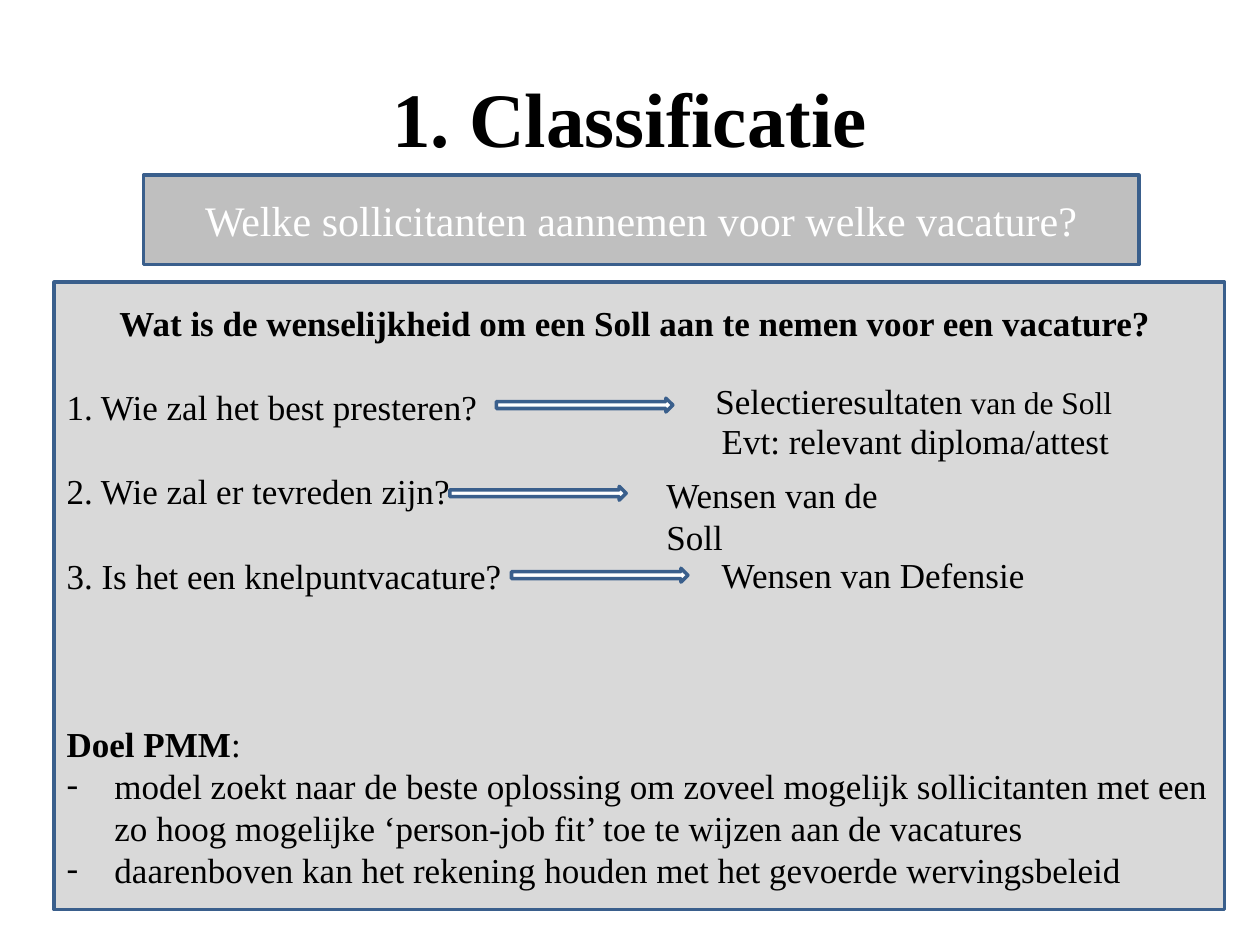
from typing import NamedTuple

from lxml import etree
from pptx import Presentation
from pptx.dml.color import RGBColor
from pptx.enum.shapes import MSO_SHAPE
from pptx.enum.text import MSO_ANCHOR, PP_ALIGN
from pptx.oxml.ns import qn
from pptx.util import Inches, Pt

RECT, ARROW = MSO_SHAPE.RECTANGLE, MSO_SHAPE.RIGHT_ARROW
TOP, MIDDLE = MSO_ANCHOR.TOP, MSO_ANCHOR.MIDDLE
LEFT, CENTER = PP_ALIGN.LEFT, PP_ALIGN.CENTER

FONT = "Times New Roman"
COLORS = {
    "text": "000000",
    "light": "FFFFFF",
    "banner": "BFBFBF",
    "panel": "D9D9D9",
    "line": "3A5F8C",
}
COLS, ROWS = 100, 75
CELL = Inches(0.1)
LINE_GAP = 24  # one line of body text, in points


class Box(NamedTuple):
    """A place on the grid, in columns and rows."""
    col: float
    row: float
    cols: float
    rows: float

    def emu(self) -> list[int]:
        return [round(n * CELL) for n in self]


class Run(NamedTuple):
    text: str
    size: float = 20
    bold: bool = False
    color: str = "text"


class Para(NamedTuple):
    runs: list[Run]
    align: PP_ALIGN = LEFT
    before: float = 0
    bullet: bool = False


def rgb(name: str) -> RGBColor:
    return RGBColor.from_string(COLORS[name])


def add_dash(p) -> None:
    """Give the paragraph a hanging dash bullet."""
    pPr = p._p.get_or_add_pPr()
    pPr.set("marL", str(Inches(0.38)))
    pPr.set("indent", str(-Inches(0.38)))
    etree.SubElement(pPr, qn("a:buFont")).set("typeface", FONT)
    etree.SubElement(pPr, qn("a:buChar")).set("char", "-")


def fill_text(tf, paras: list[Para], anchor: MSO_ANCHOR) -> None:
    tf.word_wrap = True
    tf.vertical_anchor = anchor
    for i, para in enumerate(paras):
        p = tf.paragraphs[0] if i == 0 else tf.add_paragraph()
        p.alignment = para.align
        p.space_before = Pt(para.before)
        if para.bullet:
            add_dash(p)
        for run in para.runs:
            r = p.add_run()
            r.text = run.text
            r.font.name = FONT
            r.font.size = Pt(run.size)
            r.font.bold = run.bold
            r.font.color.rgb = rgb(run.color)


def add_label(s, box: Box, paras: list[Para], anchor: MSO_ANCHOR = TOP) -> None:
    fill_text(s.shapes.add_textbox(*box.emu()).text_frame, paras, anchor)


def add_block(s, kind: MSO_SHAPE, box: Box, fill: str, paras: list[Para]) -> None:
    sp = s.shapes.add_shape(kind, *box.emu())
    sp.shadow.inherit = False
    sp.fill.solid()
    sp.fill.fore_color.rgb = rgb(fill)
    sp.line.color.rgb = rgb("line")
    sp.line.width = Pt(2)
    if paras:
        fill_text(sp.text_frame, paras, MIDDLE)


QUESTIONS = [
    "1. Wie zal het best presteren?",
    "2. Wie zal er tevreden zijn?",
    "3. Is het een knelpuntvacature?",
]
GOALS = [
    "model zoekt naar de beste oplossing om zoveel mogelijk sollicitanten met een "
    "zo hoog mogelijke ‘person-job fit’ toe te wijzen aan de vacatures",
    "daarenboven kan het rekening houden met het gevoerde wervingsbeleid",
]
PANEL = [
    Para([Run("Wat is de wenselijkheid om een Soll aan te nemen voor een vacature? ",
              bold=True)], CENTER),
    *[Para([Run(q)], before=LINE_GAP) for q in QUESTIONS],
    Para([Run("Doel PMM", bold=True), Run(":")], before=3 * LINE_GAP),
    *[Para([Run(g)], bullet=True) for g in GOALS],
]
ARROWS = [(39.4, 31.6), (35.7, 38.6), (40.6, 45.1)]
ANSWERS = [
    (Box(55.8, 29.6, 34.7, 4.4), [Run("Selectieresultaten"), Run(" van de Soll", 18)]),
    (Box(51.9, 37.1, 23.3, 4.4), [Run("Wensen van de Soll")]),
    (Box(56.3, 43.4, 27.6, 4.4), [Run("Wensen van Defensie")]),
    (Box(56.3, 32.8, 34.7, 4.4), [Run("Evt: relevant diploma/attest")]),
]


def main() -> None:
    prs = Presentation()
    prs.slide_width, prs.slide_height = COLS * CELL, ROWS * CELL
    s = prs.slides.add_slide(prs.slide_layouts[6])

    # Title and banner
    add_label(s, Box(5, 3, 90, 12.5),
              [Para([Run("1. Classificatie", 44, True)], CENTER)], MIDDLE)
    add_block(s, RECT, Box(11.4, 13.9, 79, 7.1), "banner",
              [Para([Run("Welke sollicitanten aannemen voor welke vacature?",
                         24, color="light")], CENTER)])

    # Panel with questions and goals
    add_block(s, RECT, Box(4.3, 22.4, 92.9, 49.8), "panel", PANEL)

    # Arrows from the questions to their answers
    for col, row in ARROWS:
        add_block(s, ARROW, Box(col, row, 14, 1.1), "light", [])
    for box, runs in ANSWERS:
        add_label(s, box, [Para(runs)])

    prs.save("out.pptx")


if __name__ == "__main__":
    main()
